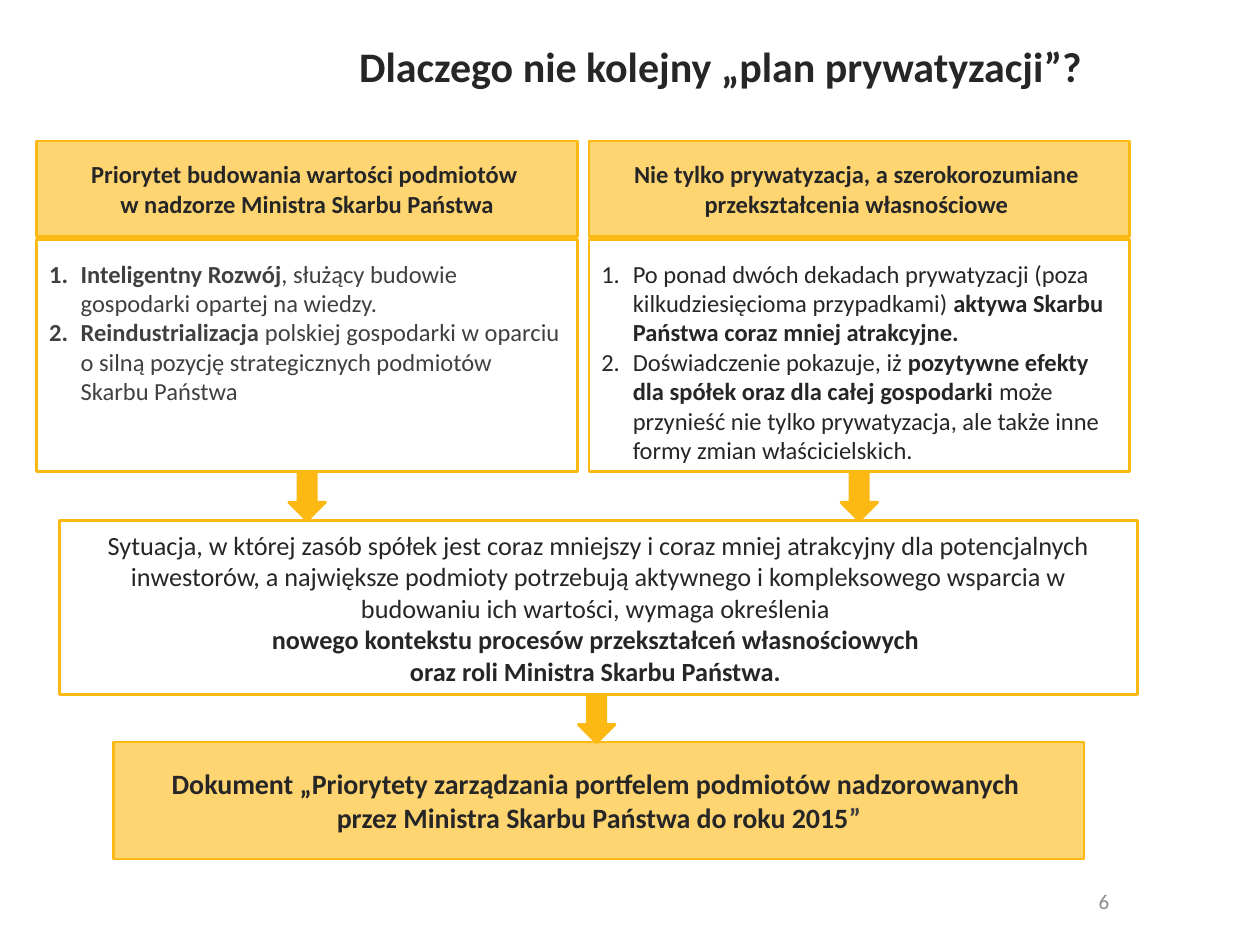
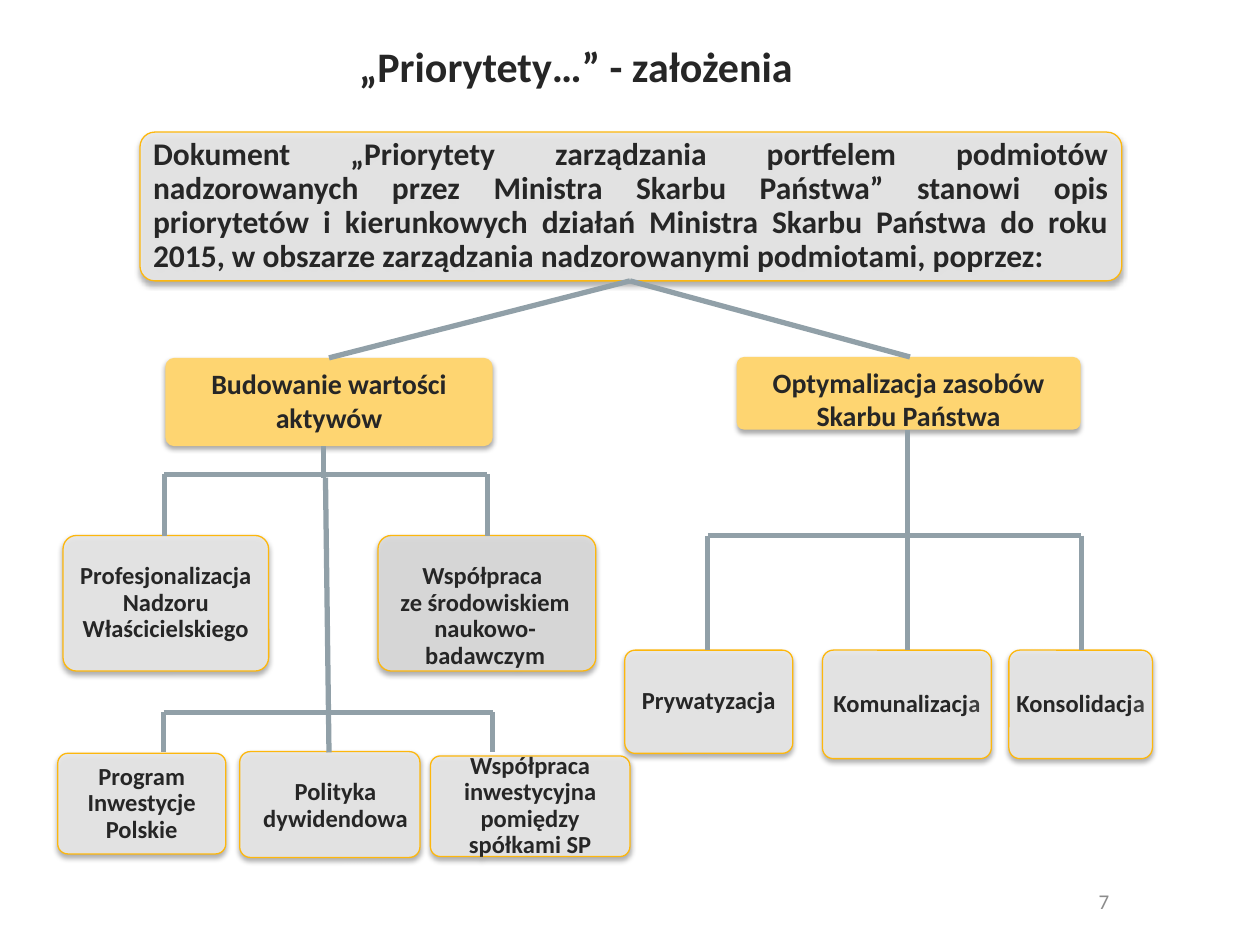
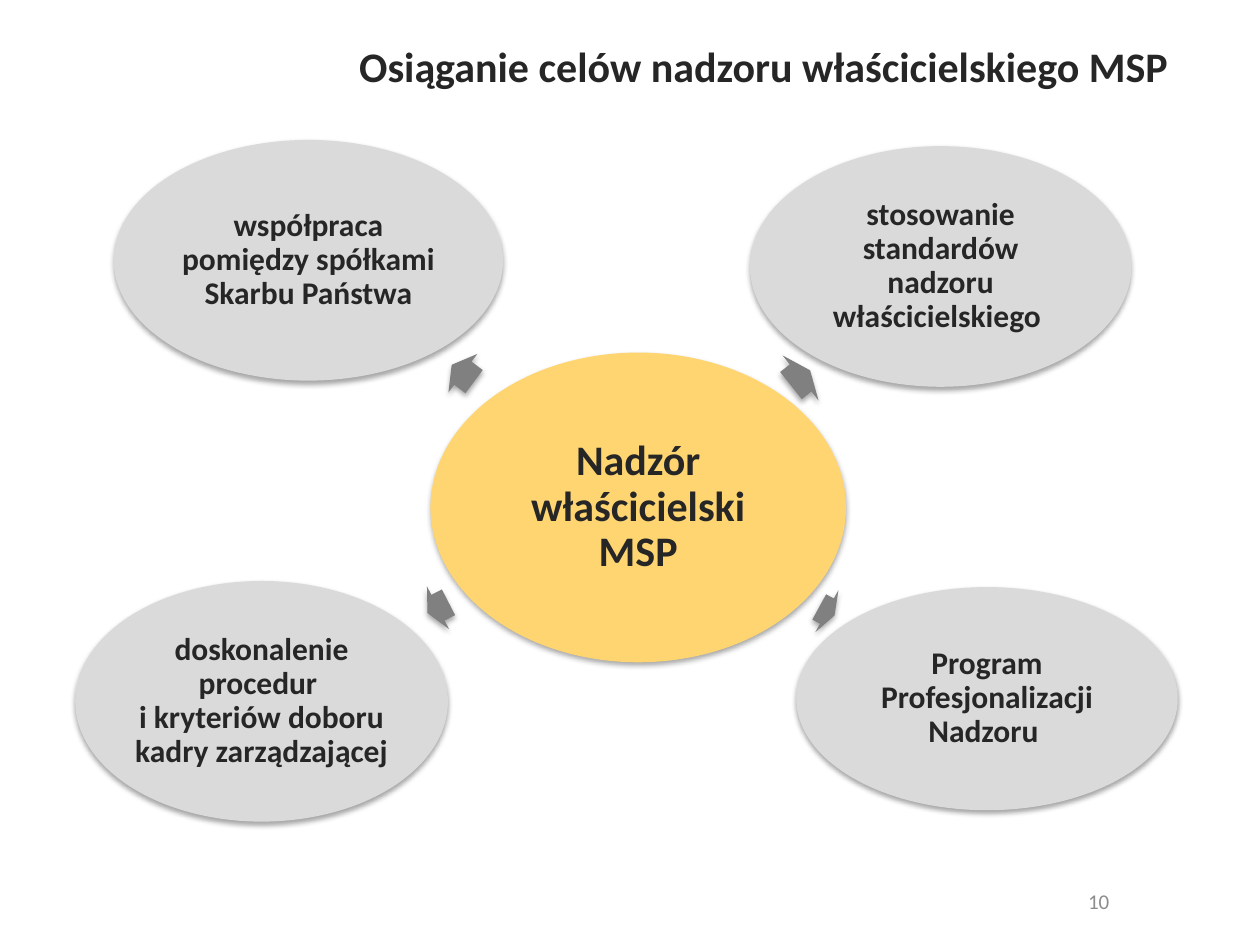
from dataclasses import dataclass
from typing import NamedTuple

from lxml.etree import SubElement
from pptx import Presentation
from pptx.dml.color import RGBColor
from pptx.enum.shapes import MSO_CONNECTOR, MSO_SHAPE
from pptx.enum.text import MSO_ANCHOR, MSO_AUTO_SIZE, PP_ALIGN
from pptx.oxml.ns import qn
from pptx.util import Pt


@dataclass(frozen=True)
class Theme:
    font: str = "Calibri"
    ink: str = "262626"
    soft_ink: str = "404040"
    page_number: str = "8C8C8C"
    gold: str = "FDB913"
    card_line: str = "FDB70D"
    pale_gold: str = "FED571"
    card: str = "E8E8E8"
    dark_card: str = "DBDBDB"
    oval: str = "DADADA"
    arrow: str = "808080"
    connector: str = "91A0A8"
    title_size: int = 24
    lead_size: int = 18
    heading_size: int = 16
    summary_size: int = 15
    body_size: int = 14
    number_size: int = 12


THEME = Theme()


class Span(NamedTuple):
    text: str
    bold: bool = True
    color: str = THEME.ink


# Content: every paragraph is a list of spans; boxes are left, top, width, height.
TITLES = [
    ("Dlaczego nie kolejny „plan prywatyzacji”?", "6", 443),
    ("„Priorytety…” - założenia", "7", 443),
    ("Osiąganie celów nadzoru właścicielskiego MSP", "10", 482),
]

COLUMNS = [
    ("Priorytet budowania wartości podmiotów \nw nadzorze Ministra Skarbu Państwa", [
        [Span("Inteligentny Rozwój", True, THEME.soft_ink),
         Span(", służący budowie gospodarki opartej na wiedzy.", False, THEME.soft_ink)],
        [Span("Reindustrializacja ", True, THEME.soft_ink),
         Span("polskiej gospodarki w oparciu o silną pozycję strategicznych podmiotów "
              "Skarbu Państwa", False, THEME.soft_ink)],
    ]),
    ("Nie tylko prywatyzacja, a szerokorozumiane \nprzekształcenia własnościowe ", [
        [Span("Po ponad dwóch dekadach prywatyzacji (poza kilkudziesięcioma przypadkami) ", False),
         Span("aktywa Skarbu Państwa coraz mniej atrakcyjne.")],
        [Span("Doświadczenie pokazuje, iż ", False),
         Span("pozytywne efekty \ndla spółek oraz dla całej gospodarki "),
         Span("może przynieść nie tylko prywatyzacja, ale także inne formy zmian "
              "właścicielskich.", False)],
    ]),
]
SUMMARY = [
    Span("Sytuacja, w której zasób spółek jest coraz mniejszy i coraz mniej atrakcyjny dla "
         "potencjalnych inwestorów, a największe podmioty potrzebują aktywnego i kompleksowego "
         "wsparcia w budowaniu ich wartości, wymaga określenia \n", False),
    Span("nowego kontekstu procesów przekształceń własnościowych \n"
         "oraz roli Ministra Skarbu Państwa. "),
]
DOCUMENT = [
    Span("Dokument „Priorytety zarządzania portfelem podmiotów nadzorowanych \n"
         "przez Ministra Skarbu Państwa do roku 2015"),
    Span("”", True, THEME.soft_ink),
]

PREMISE = ("Dokument „Priorytety zarządzania portfelem podmiotów nadzorowanych przez Ministra "
           "Skarbu Państwa” stanowi opis priorytetów i kierunkowych działań Ministra Skarbu "
           "Państwa do roku 2015, w obszarze zarządzania nadzorowanymi podmiotami, poprzez:")
BRANCHES = [
    ("Budowanie wartości aktywów", (94.5, 204.5, 187, 50.5)),
    ("Optymalizacja zasobów Skarbu Państwa", (421, 204, 196.5, 41.5)),
]
EVEN = (2, 2, 2, 2)
CARDS = [  # spans, box, fill, margins
    ([Span("Profesjonalizacja Nadzoru Właścicielskiego")], (36, 306, 117.5, 77.5), THEME.card, EVEN),
    ([Span("Polityka dywidendowa")], (137, 429.5, 103, 60.5), THEME.card, (8.5, 4, 2, 2)),
    ([Span("Współpraca \nze środowiskiem naukowo-badawczym")], (216, 306, 124.5, 77.5),
     THEME.dark_card, (2, 17, 4, 2)),
    ([Span("Program Inwestycje Polskie")], (33, 430.5, 96, 57.5), THEME.card, EVEN),
    ([Span("Współpraca inwestycyjna pomiędzy spółkami SP")], (246, 432, 114, 57.5), THEME.card, EVEN),
    ([Span("Prywatyzacja")], (357, 371.5, 96, 59), THEME.card, EVEN),
    ([Span("Komunalizacj"), Span("a", True, THEME.soft_ink)], (470, 371.5, 96.5, 62), THEME.card, EVEN),
    ([Span("Konsolidacj"), Span("a", True, THEME.soft_ink)], (576.5, 371.5, 82, 62), THEME.card, EVEN),
]
STEMS = [  # start x, start y, end x, end y
    (360, 160.5, 188, 204.5),
    (360, 160.5, 520, 204),
    (185, 255, 185, 273),
    (186, 273, 188, 430),
    (518.5, 245.5, 518.5, 306),
]
BRACKETS = [  # bar y, drop ends y, x of each drop
    (271, 306, (94, 278.5)),
    (407, 430, (93.5, 281.5)),
    (306, 371.5, (404.5, 518.5, 618)),
]

HUB = ("Nadzór właścicielski MSP", (246, 201.5, 237.5, 177))
GOALS = [  # text, oval box, arrow box, arrow rotation
    ("stosowanie standardów nadzoru właścicielskiego ", (428.5, 83.5, 218, 137.5),
     (450.5, 199.5, 14, 33), 321.4),
    ("Program Profesjonalizacji Nadzoru ", (455, 335.5, 218, 127.5), (467.5, 335.5, 10, 27.5), 28.7),
    ("doskonalenie procedur \ni kryteriów doboru kadry zarządzającej ", (43, 332, 213, 137.5),
     (243.5, 333.5, 13.5, 27.5), 152.8),
    ("współpraca pomiędzy spółkami Skarbu Państwa", (65, 80, 222.5, 137.5),
     (256.5, 199.5, 16, 27.5), 216.9),
]


def points(values):
    return [Pt(value) for value in values]


def write(shape, paragraphs, size, align=PP_ALIGN.CENTER, anchor=MSO_ANCHOR.MIDDLE,
          margins=(7.2, 3.6, 7.2, 3.6), spacing=None, numbered=False):
    """Fill a shape with paragraphs of spans; a newline in a span is a line break."""
    frame = shape.text_frame
    frame.word_wrap = True
    frame.auto_size = MSO_AUTO_SIZE.NONE
    frame.vertical_anchor = anchor
    (frame.margin_left, frame.margin_top,
     frame.margin_right, frame.margin_bottom) = points(margins)
    for index, spans in enumerate(paragraphs):
        para = frame.add_paragraph() if index else frame.paragraphs[0]
        if numbered:
            properties = para._p.get_or_add_pPr()
            properties.set("marL", str(Pt(18)))
            properties.set("indent", str(-Pt(18)))
            SubElement(properties, qn("a:buFont"), typeface="+mj-lt")
            SubElement(properties, qn("a:buAutoNum"), type="arabicPeriod")
        para.alignment = align
        if spacing:
            para.line_spacing = spacing
        for span in spans:
            for line_index, line in enumerate(span.text.split("\n")):
                if line_index:
                    para.add_line_break()
                if line:
                    run = para.add_run()
                    run.text = line
                    run.font.name = THEME.font
                    run.font.size = Pt(size)
                    run.font.bold = span.bold
                    run.font.color.rgb = RGBColor.from_string(span.color)


def add_box(page, kind, box, fill=None, line=None, line_width=1.5, opacity=None,
            shadow=False, adjustments=()):
    shape = page.shapes.add_shape(kind, *points(box))
    for index, value in enumerate(adjustments):
        shape.adjustments[index] = value
    if fill:
        shape.fill.solid()
        shape.fill.fore_color.rgb = RGBColor.from_string(fill)
    else:
        shape.fill.background()
    if line:
        shape.line.color.rgb = RGBColor.from_string(line)
        shape.line.width = Pt(line_width)
    else:
        shape.line.fill.background()
    properties = shape._element.spPr
    if opacity:
        color = properties.find(qn("a:solidFill")).find(qn("a:srgbClr"))
        SubElement(color, qn("a:alpha"), val=str(opacity * 1000))
    shape.shadow.inherit = False
    if shadow:
        outer = SubElement(properties.find(qn("a:effectLst")), qn("a:outerShdw"),
                           blurRad=str(Pt(3.1)), dist=str(Pt(1.8)), dir="5400000",
                           rotWithShape="0")
        SubElement(SubElement(outer, qn("a:srgbClr"), val="000000"), qn("a:alpha"), val="35000")
    return shape


def add_card(page, box, fill, line=None, opacity=None):
    return add_box(page, MSO_SHAPE.ROUNDED_RECTANGLE, box, fill, line, 0.75, opacity,
                   shadow=True, adjustments=(0.1,))


def add_down_arrow(page, center, top):
    add_box(page, MSO_SHAPE.DOWN_ARROW, (center - 10.5, top, 21, 27), THEME.gold, THEME.gold)


def add_line(page, *ends):
    line = page.shapes.add_connector(MSO_CONNECTOR.STRAIGHT, *points(ends))
    line.line.color.rgb = RGBColor.from_string(THEME.connector)
    line.line.width = Pt(3)
    SubElement(line._element.spPr, qn("a:effectLst"))


def add_page(deck, title, number, title_width):
    page = deck.slides.add_slide(deck.slide_layouts[5])
    heading = page.shapes.title
    heading.left, heading.top, heading.width, heading.height = points((198, 15, title_width, 45))
    write(heading, [[Span(title)]], THEME.title_size, PP_ALIGN.LEFT)
    number_box = page.shapes.add_textbox(*points((516, 500.5, 125, 29)))
    write(number_box, [[Span(number, False, THEME.page_number)]], THEME.number_size, PP_ALIGN.RIGHT)
    return page


def draw_reasons(page):
    width, gap = 309, 6.5
    for index, (heading, reasons) in enumerate(COLUMNS):
        left = 21 + index * (width + gap)
        header = add_box(page, MSO_SHAPE.RECTANGLE, (left, 80.5, width, 54.5),
                         THEME.pale_gold, THEME.gold)
        write(header, [[Span(heading)]], THEME.body_size)
        body = add_box(page, MSO_SHAPE.RECTANGLE, (left, 137, width, 132.5), line=THEME.gold)
        write(body, reasons, THEME.body_size, PP_ALIGN.LEFT, MSO_ANCHOR.TOP,
              (7.2, 10.8, 7.2, 0), numbered=True)
        add_down_arrow(page, left + width / 2, 270.5)
    summary = add_box(page, MSO_SHAPE.RECTANGLE, (34, 297.5, 616, 99.5), line=THEME.gold)
    write(summary, [SUMMARY], THEME.summary_size)
    document = add_box(page, MSO_SHAPE.RECTANGLE, (65, 424, 554.5, 67),
                       THEME.pale_gold, THEME.gold)
    write(document, [DOCUMENT], THEME.heading_size)
    add_down_arrow(page, 341, 397.5)


def draw_tree(page):
    premise = add_card(page, (80, 75.5, 561, 85), THEME.card, THEME.card_line, 90)
    write(premise, [[Span(PREMISE)]], THEME.lead_size, PP_ALIGN.JUSTIFY,
          margins=(5, 4, 5, 4), spacing=0.9)
    for text, box in BRANCHES:
        branch = add_card(page, box, THEME.pale_gold)
        write(branch, [[Span(text)]], THEME.heading_size, anchor=MSO_ANCHOR.TOP)
    for spans, box, fill, margins in CARDS:
        card = add_card(page, box, fill, THEME.card_line, 90)
        write(card, [spans], THEME.body_size, margins=margins, spacing=0.9)
    for stem in STEMS:
        add_line(page, *stem)
    for bar, bottom, drops in BRACKETS:
        add_line(page, drops[0], bar, drops[-1], bar)
        for x in drops:
            add_line(page, x, bar, x, bottom)


def draw_goals(page):
    def add_oval(text, box, fill, size):
        oval = add_box(page, MSO_SHAPE.OVAL, box, fill, shadow=True)
        write(oval, [[Span(text)]], size, margins=EVEN, spacing=0.9)

    add_oval(*HUB, THEME.pale_gold, THEME.title_size)
    for text, box, arrow_box, rotation in GOALS:
        arrow = add_box(page, MSO_SHAPE.RIGHT_ARROW, arrow_box, THEME.arrow,
                        shadow=True, adjustments=(0.6, 0.5))
        arrow.rotation = rotation
        add_oval(text, box, THEME.oval, THEME.lead_size)


def main():
    deck = Presentation()
    deck.slide_width, deck.slide_height = Pt(720), Pt(540)
    for heading, draw in zip(TITLES, (draw_reasons, draw_tree, draw_goals)):
        draw(add_page(deck, *heading))
    deck.save("out.pptx")


if __name__ == "__main__":
    main()
